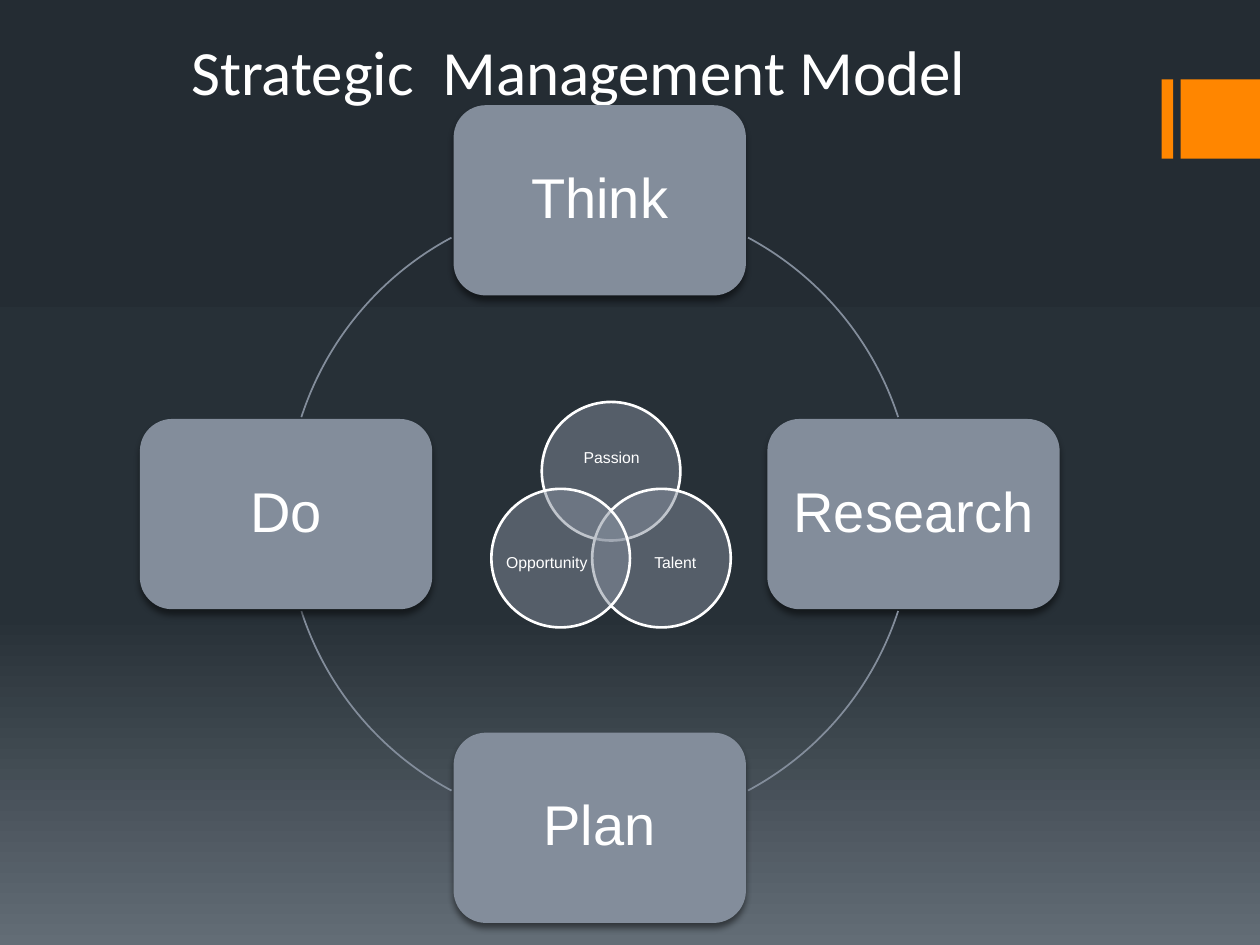
from copy import deepcopy

from pptx import Presentation
from pptx.dml.color import RGBColor
from pptx.enum.shapes import MSO_SHAPE as Shape
from pptx.enum.text import MSO_ANCHOR as Anchor, PP_ALIGN as Align
from pptx.oxml import parse_xml
from pptx.oxml.ns import nsdecls, qn
from pptx.util import Inches, Pt

WHITE, SLATE, ORANGE = "FFFFFF", "838D9B", "FF8600"
CYCLE_X, CYCLE_Y, CYCLE_RADIUS = 4.76, 4.08, 2.49
NODE_WIDTH, NODE_HEIGHT = 2.32, 1.51
CIRCLE_SIZE = 1.1

# Node label with its direction from the cycle's centre
NODES = [("Think", 0, -1), ("Research", 1, 0), ("Plan", 0, 1), ("Do", -1, 0)]
# Start and end angles, clockwise from three o'clock
ARCS = [(298.2, 342), (18, 61.8), (118.2, 162), (198, 241.8)]
# Circle position, label and label box
CIRCLES = [
    (4.3, 3.19, "Passion", (4.45, 3.39, 0.81, 0.49)),
    (4.7, 3.88, "Talent", (5.03, 4.17, 0.66, 0.6)),
    (3.9, 3.88, "Opportunity", (4.01, 4.17, 0.66, 0.6)),
]


def color(hex_value):
    return RGBColor.from_string(hex_value)


def box(left, top, width, height):
    return [Inches(value) for value in (left, top, width, height)]


def set_background(slide, stops):
    fill = slide.background.fill
    fill.gradient()
    fill.gradient_angle = 270
    stop_list = next(slide.element.iter(qn("a:gsLst")))
    stop_list.insert(1, deepcopy(stop_list[0]))
    for stop, (position, hex_value) in zip(fill.gradient_stops, stops):
        stop.position = position
        stop.color.rgb = color(hex_value)


def set_text(shape, text, size, font="Arial", align=Align.CENTER,
             anchor=Anchor.MIDDLE, inset=0.0, spacing=0.9):
    frame = shape.text_frame
    frame_format = {"word_wrap": True, "vertical_anchor": anchor}
    for side in ("left", "top", "right", "bottom"):
        frame_format[f"margin_{side}"] = Inches(inset)
    for name, value in frame_format.items():
        setattr(frame, name, value)
    paragraph = frame.paragraphs[0]
    paragraph.alignment = align
    paragraph.line_spacing = spacing
    run = paragraph.add_run()
    run.text = text
    for name, value in {"name": font, "size": Pt(size)}.items():
        setattr(run.font, name, value)
    run.font.color.rgb = color(WHITE)


def add_shape(slide, kind, position, fill=None, line=None, line_width=1):
    shape = slide.shapes.add_shape(kind, *box(*position))
    shape.shadow.inherit = False
    if fill:
        shape.fill.solid()
        shape.fill.fore_color.rgb = color(fill)
    else:
        shape.fill.background()
    if line:
        shape.line.color.rgb = color(line)
        shape.line.width = Pt(line_width)
    else:
        shape.line.fill.background()
    return shape


def add_shadow(shape):
    effects = shape.element.spPr.find(qn("a:effectLst"))
    effects.append(parse_xml(
        f'<a:outerShdw {nsdecls("a")} blurRad="{Pt(3.8)}" dist="{Pt(3)}" '
        'dir="5400000" rotWithShape="0"><a:srgbClr val="000000">'
        '<a:alpha val="48000"/></a:srgbClr></a:outerShdw>'))


def add_label(slide, position, text, size, **text_format):
    set_text(slide.shapes.add_textbox(*box(*position)), text, size, **text_format)


def add_node(slide, label, across, down):
    left = CYCLE_X + across * CYCLE_RADIUS - NODE_WIDTH / 2
    top = CYCLE_Y + down * CYCLE_RADIUS - NODE_HEIGHT / 2
    node = add_shape(slide, Shape.ROUNDED_RECTANGLE,
                     (left, top, NODE_WIDTH, NODE_HEIGHT), SLATE)
    node.adjustments[0] = 0.17
    add_shadow(node)
    # The rounded corners already narrow the text area
    set_text(node, label, 32, inset=0.1)


def add_arc(slide, start, end):
    diameter = 2 * CYCLE_RADIUS
    arc = add_shape(slide, Shape.ARC,
                    (CYCLE_X - CYCLE_RADIUS, CYCLE_Y - CYCLE_RADIUS,
                     diameter, diameter), line=SLATE)
    # Angles are stored as 60000ths of a degree, adjustments as 100000ths
    for index, angle in enumerate((start, end)):
        arc.adjustments[index] = angle * 0.6


def add_circle(slide, left, top, label, label_position):
    circle = add_shape(slide, Shape.OVAL, (left, top, CIRCLE_SIZE, CIRCLE_SIZE),
                       SLATE, WHITE, 1.5)
    fill_color = circle.element.spPr.find(qn("a:solidFill"))[0]
    fill_color.append(parse_xml(f'<a:alpha {nsdecls("a")} val="50000"/>'))
    add_label(slide, label_position, label, 9)


def main():
    presentation = Presentation()
    presentation.slide_width, presentation.slide_height = Inches(10), Inches(7.5)
    slide = presentation.slides.add_slide(presentation.slide_layouts[6])
    set_background(slide, [(0, "242C33"), (0.65, "273037"), (1, "636D76")])

    # Orange marker at the right edge
    for left, width in ((9.22, 0.09), (9.37, 0.63)):
        add_shape(slide, Shape.RECTANGLE, (left, 0.63, width, 0.63), ORANGE)

    # Title
    add_label(slide, (1.42, 0.21, 8, 1.26), "Strategic  Management Model", 36,
              font="Calibri", align=Align.LEFT, anchor=Anchor.TOP,
              inset=0.05, spacing=1)
    title_frame = slide.shapes[-1].text_frame
    title_frame.margin_left = title_frame.margin_right = Inches(0.1)

    # Overlapping circles in the middle
    for circle in CIRCLES:
        add_circle(slide, *circle)

    # Cycle of nodes joined by arcs
    for node, arc in zip(NODES, ARCS):
        add_node(slide, *node)
        add_arc(slide, *arc)

    presentation.save("out.pptx")


if __name__ == "__main__":
    main()
